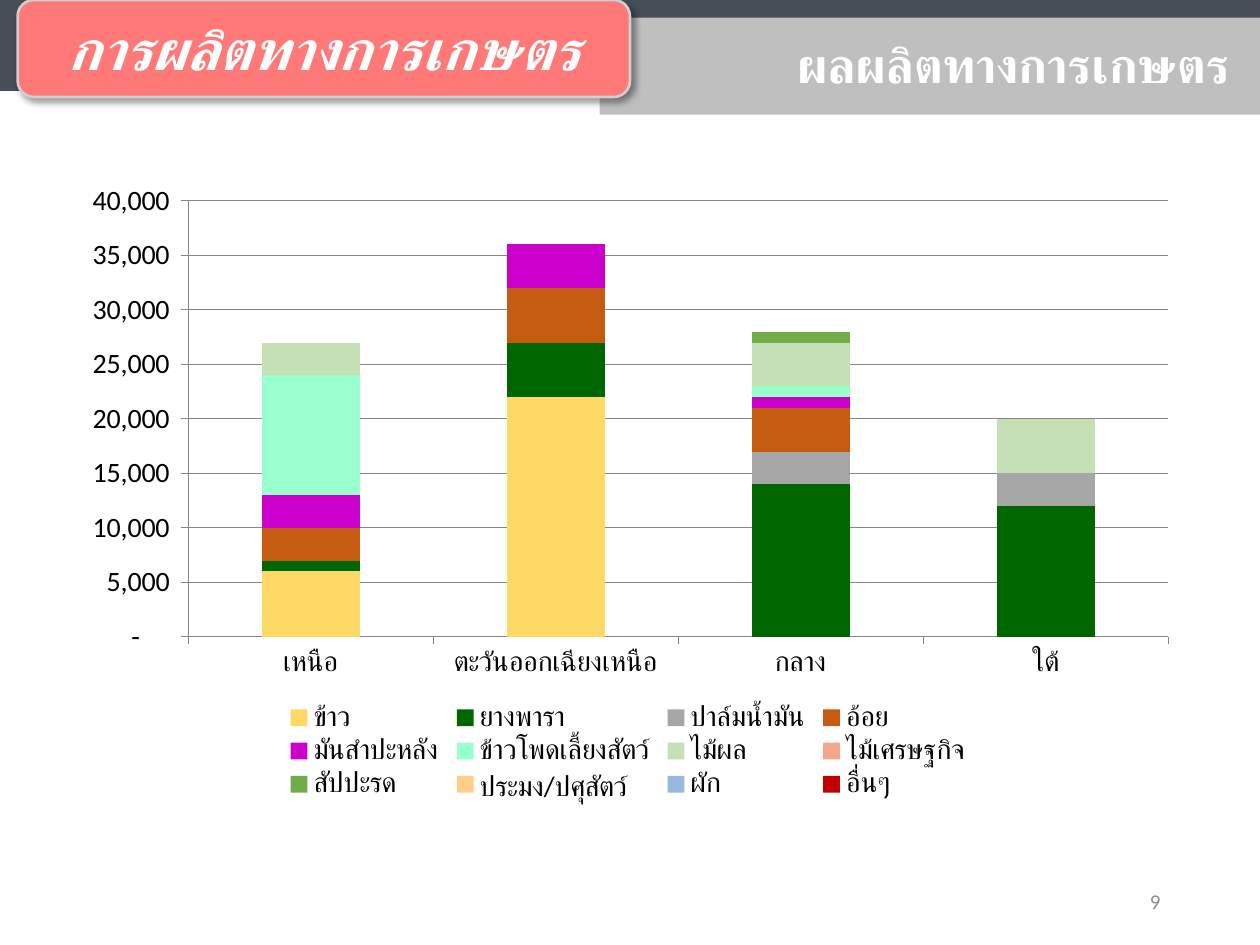
from lxml import etree
from pptx import Presentation
from pptx import util as u
from pptx.chart.data import CategoryChartData
from pptx.dml.color import RGBColor
from pptx.enum import chart as charts, shapes, text
from pptx.oxml import parse_xml
from pptx.oxml.ns import nsdecls, qn

SLATE = RGBColor(0x46, 0x4E, 0x58)
SILVER = RGBColor(0xBF, 0xBF, 0xBF)
CORAL = RGBColor(0xFF, 0x79, 0x79)
BORDER = RGBColor(0xD0, 0xCE, 0xCE)
WHITE = RGBColor(0xFF, 0xFF, 0xFF)
BLACK = RGBColor(0, 0, 0)
PAGE_GRAY = RGBColor(0x8C, 0x8C, 0x8C)
AXIS_GRAY = RGBColor(0x86, 0x86, 0x86)
FONT = "Calibri"

REGIONS = ["เหนือ", "ตะวันออกเฉียงเหนือ", "กลาง", "ใต้"]
CROPS = [
    ("ข้าว", [6000, 22000, 0, 0], RGBColor(0xFF, 0xD9, 0x66)),
    ("ยางพารา", [1000, 5000, 14000, 12000], RGBColor(0x00, 0x66, 0x00)),
    ("ปาล์มน้ำมัน", [None, None, 3000, 3000], RGBColor(0xA6, 0xA6, 0xA6)),
    ("อ้อย", [3000, 5000, 4000, None], RGBColor(0xC5, 0x5A, 0x11)),
    ("มันสำปะหลัง", [3000, 4000, 1000, None], RGBColor(0xCC, 0x00, 0xCC)),
    ("ข้าวโพดเลี้ยงสัตว์", [11000, 0, 1000, None], RGBColor(0x99, 0xFF, 0xCC)),
    ("ไม้ผล", [3000, 0, 4000, 5000], RGBColor(0xC5, 0xE0, 0xB4)),
    ("ไม้เศรษฐกิจ", [0, 0, 0, 0], RGBColor(0xF1, 0xA7, 0x8A)),
    ("สัปปะรด", [0, None, 1000, None], RGBColor(0x70, 0xAD, 0x47)),
    ("ประมง/ปศุสัตว์", [0, 0, None, 0], RGBColor(0xFF, 0xCF, 0x89)),
    ("ผัก", [0, 0, 0, 0], RGBColor(0x97, 0xB9, 0xE0)),
    ("อื่นๆ", [0, 0, 0, 0], RGBColor(0xC0, 0x00, 0x00)),
]


def add_block(kind, left, top, width, height, color):
    shape = slide.shapes.add_shape(
        kind, u.Inches(left), u.Inches(top), u.Inches(width), u.Inches(height))
    shape.shadow.inherit = False
    shape.fill.solid()
    shape.fill.fore_color.rgb = color
    shape.line.fill.background()
    return shape


def write(shape, words, size, color, align, bold=False, italic=False):
    frame = shape.text_frame
    frame.word_wrap = True
    frame.auto_size = text.MSO_AUTO_SIZE.NONE
    frame.vertical_anchor = text.MSO_ANCHOR.MIDDLE
    paragraph = frame.paragraphs[0]
    paragraph.alignment = align
    run = paragraph.add_run()
    run.text = words
    run.font.name = FONT
    run.font.size = u.Pt(size)
    run.font.bold = bold
    run.font.italic = italic
    run.font.color.rgb = color


presentation = Presentation()
presentation.slide_width = u.Inches(10)
presentation.slide_height = u.Inches(7.5)
slide = presentation.slides.add_slide(presentation.slide_layouts[5])

add_block(shapes.MSO_SHAPE.FLOWCHART_PROCESS, 0, -0.05, 10, 0.77, SLATE)
add_block(shapes.MSO_SHAPE.RECTANGLE, 4.76, 0.14, 5.24, 0.77, SILVER)
section = add_block(
    shapes.MSO_SHAPE.FLOWCHART_ALTERNATE_PROCESS, 0.14, 0, 4.86, 0.77, CORAL)
section.line.color.rgb = BORDER
section.line.width = u.Pt(1.5)
effects = section.element.spPr.find(qn("a:effectLst"))
shadow = etree.SubElement(
    effects, qn("a:outerShdw"), blurRad=str(u.Pt(4)), dist=str(u.Pt(3)),
    dir="2700000", algn="tl", rotWithShape="0")
shadow_color = etree.SubElement(shadow, qn("a:srgbClr"), val="000000")
etree.SubElement(shadow_color, qn("a:alpha"), val="40000")
write(section, "การผลิตทางการเกษตร", 32, WHITE, text.PP_ALIGN.CENTER, True, True)

title = slide.shapes.title
title.left, title.top = u.Inches(5.26), u.Inches(0.22)
title.width, title.height = u.Inches(4.6), u.Inches(0.57)
write(title, "ผลผลิตทางการเกษตร", 28, WHITE, text.PP_ALIGN.RIGHT, True)
title.element.getparent().append(title.element)

page_number = slide.shapes.add_textbox(
    u.Inches(7.06), u.Inches(6.95), u.Inches(2.25), u.Inches(0.4))
write(page_number, "9", 12, PAGE_GRAY, text.PP_ALIGN.RIGHT)

chart_data = CategoryChartData()
chart_data.categories = REGIONS
for name, values, color in CROPS:
    chart_data.add_series(name, values)
chart = slide.shapes.add_chart(
    charts.XL_CHART_TYPE.COLUMN_STACKED, u.Inches(0.51), u.Inches(1.34),
    u.Inches(8.94), u.Inches(5.09), chart_data).chart
chart.has_title = False
chart.font.name = FONT
chart.font.size = u.Pt(16)
chart.font.color.rgb = BLACK
chart.has_legend = True
chart.legend.position = charts.XL_LEGEND_POSITION.BOTTOM
chart.legend.include_in_layout = False
chart.legend.font.name = FONT
chart.legend.font.size = u.Pt(16)

plot = chart.plots[0]
plot.gap_width = 150
plot.overlap = 100
plot.vary_by_categories = False
for series, (name, values, color) in zip(plot.series, CROPS):
    series.format.fill.solid()
    series.format.fill.fore_color.rgb = color

value_axis = chart.value_axis
for axis in (chart.category_axis, value_axis):
    axis.major_tick_mark = charts.XL_TICK_MARK.OUTSIDE
    axis.tick_labels.font.name = FONT
    axis.tick_labels.font.size = u.Pt(16)
for lined in (chart.category_axis, value_axis, value_axis.major_gridlines):
    lined.format.line.color.rgb = AXIS_GRAY
    lined.format.line.width = u.Pt(0.5)
value_axis.minimum_scale = 0
value_axis.maximum_scale = 40000
value_axis.major_unit = 5000
value_axis.tick_labels.number_format = '_-* #,##0_-;\\-* #,##0_-;_-* "-"??_-;_-@_-'
value_axis.tick_labels.number_format_is_linked = False

plot_area = chart.element.find(".//" + qn("c:plotArea"))
for old_layout in plot_area.findall(qn("c:layout")):
    plot_area.remove(old_layout)
plot_area.insert(0, parse_xml(
    f'<c:layout {nsdecls("c")}><c:manualLayout><c:layoutTarget val="inner"/>'
    '<c:xMode val="edge"/><c:yMode val="edge"/><c:x val="0.11"/><c:y val="0.05"/>'
    '<c:w val="0.87"/><c:h val="0.68"/></c:manualLayout></c:layout>'))

presentation.save("out.pptx")
